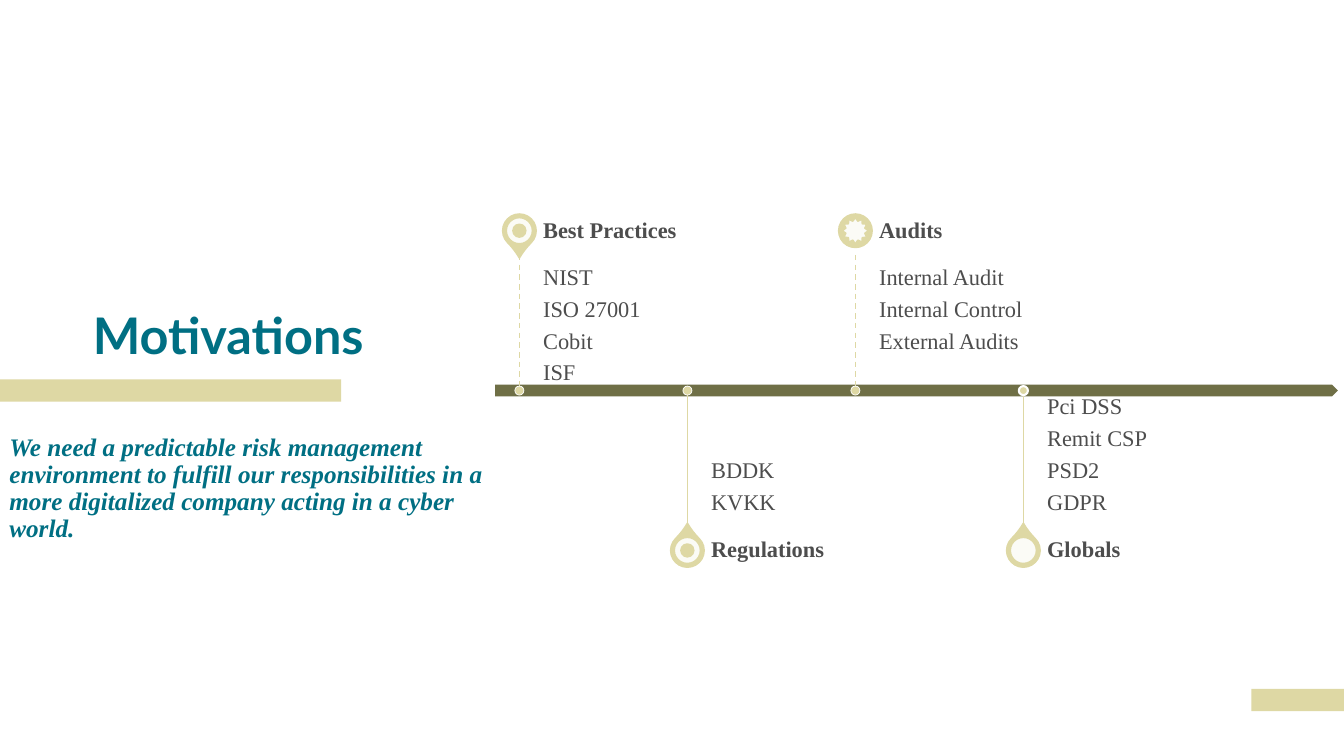
from lxml.etree import SubElement
from pptx import Presentation
from pptx.dml.color import RGBColor
from pptx.enum.dml import MSO_LINE
from pptx.enum.shapes import MSO_CONNECTOR, MSO_SHAPE
from pptx.enum.text import MSO_ANCHOR
from pptx.oxml.ns import qn
from pptx.util import Pt

SAND, OLIVE, TEAL, GREY, WHITE = "DED8A4", "606032", "006F83", "4D4D4D", "FFFFFF"
SERIF = "Times New Roman"
AXIS = 279      # height of the timeline
FIRST = 371     # centre of the first marker
STEP = 120      # gap between markers
STEM = 97       # length of a marker's stem
HEAD = 34       # height of a heading
REACH = 114.2   # from the timeline to the centre of a pin

# heading, items, pin, pin core, width of the dot's rim
STOPS = [
    ("Best Practices", ["NIST", "ISO 27001", "Cobit", "ISF"],
     MSO_SHAPE.TEAR, MSO_SHAPE.DONUT, 0.5),
    ("Regulations", ["BDDK", "KVKK"],
     MSO_SHAPE.TEAR, MSO_SHAPE.DONUT, 0.5),
    ("Audits", ["Internal Audit", "Internal Control", "External Audits"],
     MSO_SHAPE.OVAL, MSO_SHAPE.STAR_12_POINT, 0.5),
    ("Globals", ["Pci DSS", "Remit CSP", "PSD2", "GDPR"],
     MSO_SHAPE.TEAR, MSO_SHAPE.OVAL, 1.5),
]


def paint(target, color):
    target.solid()
    target.fore_color.rgb = RGBColor.from_string(color)


def add_shape(slide, kind, box, fill, line=None, width=1, alpha=None):
    """Draw a preset shape; alpha is its opacity in percent."""
    shape = slide.shapes.add_shape(kind, *map(Pt, box))
    shape.shadow.inherit = False
    paint(shape.fill, fill)
    if alpha:
        color = shape.fill._xPr.find(qn("a:solidFill"))[0]
        SubElement(color, qn("a:alpha")).set("val", str(alpha * 1000))
    if line:
        paint(shape.line.fill, line)
        shape.line.width = Pt(width)
    else:
        shape.line.fill.background()
    return shape


def add_disc(slide, kind, x, y, size, fill, line, width=1, alpha=None):
    """Draw a preset shape centred on x, y."""
    box = (x - size / 2, y - size / 2, size, size)
    return add_shape(slide, kind, box, fill, line, width, alpha)


def add_text(slide, box, lines, size, color=GREY, font=SERIF, bold=False,
             italic=False, anchor=MSO_ANCHOR.BOTTOM, pads=(0, 0, 0, 0), gap=0):
    """Write one paragraph per line; pads run left, top, right, bottom."""
    frame = slide.shapes.add_textbox(*map(Pt, box)).text_frame
    frame.word_wrap = True
    frame.vertical_anchor = anchor
    (frame.margin_left, frame.margin_top,
     frame.margin_right, frame.margin_bottom) = map(Pt, pads)
    frame.text = "\n".join(lines)
    for para in frame.paragraphs:
        para.line_spacing = 0.9
        para.space_after = Pt(gap)
        para.font.size = Pt(size)
        para.font.name = font
        para.font.bold = bold
        para.font.italic = italic
        para.font.color.rgb = RGBColor.from_string(color)


def add_stem(slide, x, end, above):
    stem = slide.shapes.add_connector(
        MSO_CONNECTOR.STRAIGHT, Pt(x), Pt(end), Pt(x), Pt(AXIS))
    paint(stem.line.fill, SAND)
    stem.line.width = Pt(1 if above else 0.5)
    if above:
        stem.line.dash_style = MSO_LINE.DASH
    SubElement(stem._element.spPr, qn("a:effectLst"))


def add_stop(slide, x, above, title, items, pin, core, rim):
    """Draw one marker with its texts above or below the timeline."""
    side = -1 if above else 1
    end, mid = AXIS + side * STEM, AXIS + side * REACH
    head = add_disc(slide, pin, x, mid, 24, SAND, SAND)
    head.rotation = 135 if above else 315
    if pin == MSO_SHAPE.TEAR:
        head.adjustments[0] = 1.15
    add_disc(slide, core, x, mid, 18.6, WHITE, SAND, alpha=90)

    left = x + 17
    add_text(slide, (left, min(end, AXIS), 200, STEM), items, 16, gap=5.5,
             anchor=MSO_ANCHOR.TOP if above else MSO_ANCHOR.BOTTOM,
             pads=(0, 8, 8, 12) if above else (0, 12, 0, 8))
    add_text(slide, (left, end - HEAD if above else end, 200, HEAD), [title],
             16, bold=True, anchor=MSO_ANCHOR.MIDDLE, pads=(0, 0, 8, 0))
    add_stem(slide, x, end, above)
    add_disc(slide, MSO_SHAPE.OVAL, x, AXIS, 6.5, SAND, WHITE, rim)


def main():
    deck = Presentation()
    deck.slide_width, deck.slide_height = Pt(960), Pt(540)
    slide = deck.slides.add_slide(deck.slide_layouts[6])

    add_shape(slide, MSO_SHAPE.RECTANGLE, (893.8, 492, 66.2, 16), SAND)
    add_shape(slide, MSO_SHAPE.RECTANGLE, (0, 271, 243.7, 16), SAND)
    add_text(slide, (66.3, 156, 348.5, 105), ["Motivations"], 36, TEAL, "Lato",
             bold=True)
    add_text(slide, (6.7, 289, 347, 99),
             ["We need a predictable risk management environment to fulfill "
              "our responsibilities in a more digitalized company acting in "
              "a cyber world."], 18, TEAL, bold=True, italic=True)

    add_shape(slide, MSO_SHAPE.PENTAGON, (353.6, AXIS - 4.2, 602, 8.4), OLIVE,
              alpha=90)
    for i, stop in enumerate(STOPS):
        add_stop(slide, FIRST + i * STEP, i % 2 == 0, *stop)

    deck.save("out.pptx")


if __name__ == "__main__":
    main()
